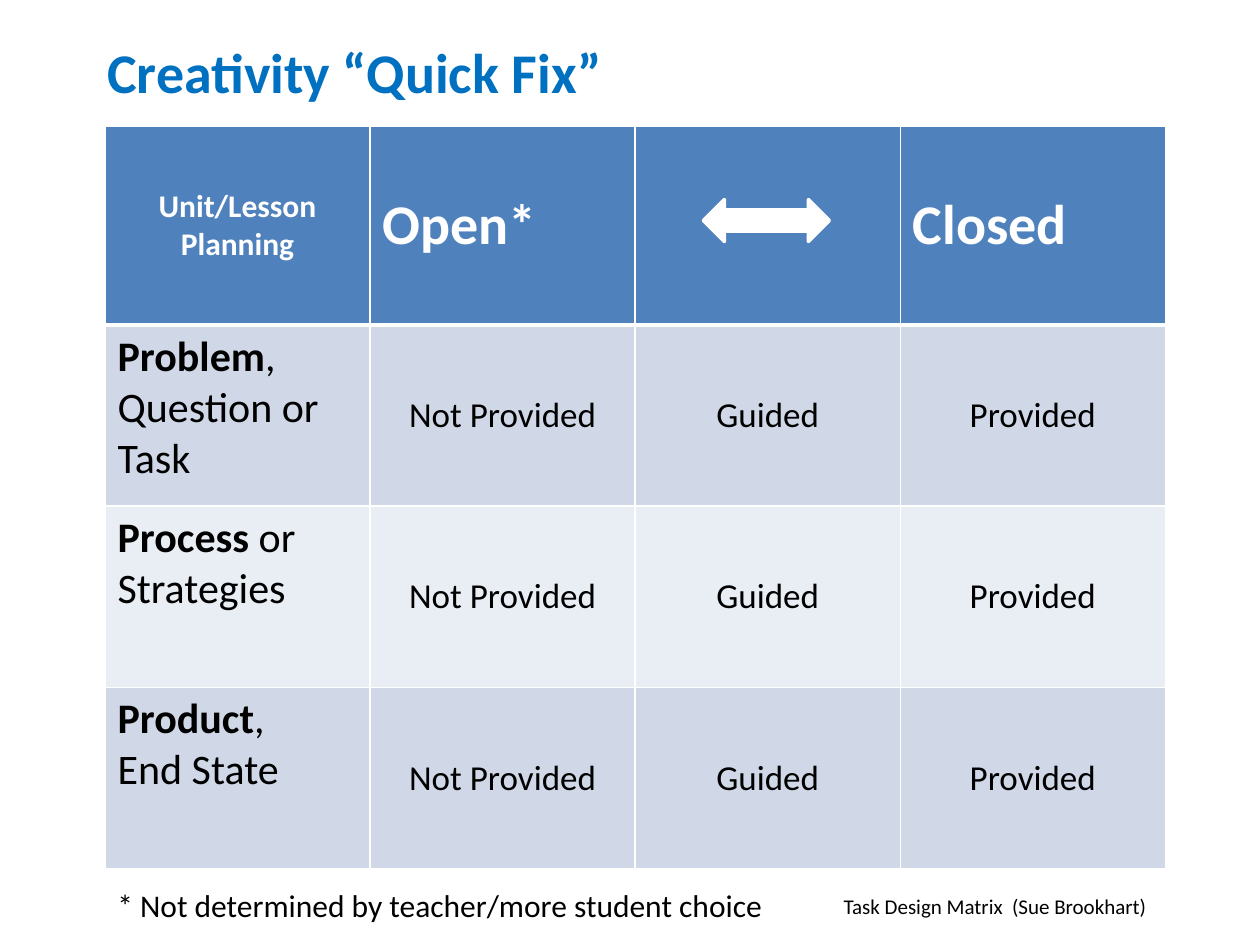
import pptx
import pptx.util
import pptx.dml.color
import pptx.enum.shapes
import pptx.enum.text
import pptx.oxml
import pptx.oxml.ns

Pt = pptx.util.Pt
ALIGN = pptx.enum.text.PP_ALIGN
ANCHOR = pptx.enum.text.MSO_ANCHOR
FONT = "Calibri"
COLORS = {
    "title": "0070C0",
    "header": "4F81BD",
    "odd_row": "D0D8E8",
    "even_row": "E9EDF4",
    "white": "FFFFFF",
    "black": "000000",
}
HEADER = [("Unit/Lesson Planning", 18, ALIGN.CENTER), ("Open*", 32, ALIGN.LEFT),
          ("", 32, ALIGN.LEFT), ("Closed", 32, ALIGN.LEFT)]
# Each row label is a list of paragraphs: (bold part, regular part)
ROW_LABELS = [
    [("Problem", ", Question or Task")],
    [("Process ", "or Strategies")],
    [("Product", ","), ("", "End State")],
]
LEVELS = ["Not Provided", "Guided", "Provided"]


def rgb(name):
    return pptx.dml.color.RGBColor.from_string(COLORS[name])


def style(para, size, color, bold=False, align=ALIGN.LEFT):
    para.alignment = align
    para.font.name = FONT
    para.font.size = Pt(size)
    para.font.bold = bold
    para.font.color.rgb = rgb(color)


def place(shape, box):
    shape.left, shape.top, shape.width, shape.height = [Pt(value) for value in box]


def add_title(page, box, text):
    title = page.shapes.title
    place(title, box)
    frame = title.text_frame
    frame.word_wrap = False
    frame.auto_size = pptx.enum.text.MSO_AUTO_SIZE.NONE
    frame.vertical_anchor = ANCHOR.TOP
    frame.text = text
    style(frame.paragraphs[0], 32, "title", bold=True)


def add_note(page, box, text, size):
    frame = page.shapes.add_textbox(*[Pt(value) for value in box]).text_frame
    frame.word_wrap = False
    frame.text = text
    style(frame.paragraphs[0], size, "black")


def format_cell(cell, fill, bottom=1):
    """Give a cell white borders, with its own bottom width, and a solid fill."""
    properties = cell._tc.get_or_add_tcPr()
    for side, width in (("L", 1), ("R", 1), ("T", 1), ("B", bottom)):
        properties.append(pptx.oxml.parse_xml(
            f'<a:ln{side} {pptx.oxml.ns.nsdecls("a")} w="{Pt(width)}"><a:solidFill>'
            f'<a:srgbClr val="{COLORS["white"]}"/></a:solidFill></a:ln{side}>'))
    cell.fill.solid()
    cell.fill.fore_color.rgb = rgb(fill)


def fill_header(cells):
    for cell, (text, size, align) in zip(cells, HEADER):
        format_cell(cell, "header", bottom=3)
        cell.vertical_anchor = ANCHOR.MIDDLE
        cell.text = text
        style(cell.text_frame.paragraphs[0], size, "white", True, align)


def fill_label(cell, lines):
    frame = cell.text_frame
    for index, (strong, plain) in enumerate(lines):
        para = frame.add_paragraph() if index else frame.paragraphs[0]
        style(para, 24, "black")
        for text, bold in ((strong, True), (plain, False)):
            if text:
                span = para.add_run()
                span.text = text
                span.font.bold = bold


def add_matrix(page, box, header_height):
    left, top, width, height = box
    count = len(ROW_LABELS)
    matrix = page.shapes.add_table(
        count + 1, len(HEADER), Pt(left), Pt(top), Pt(width), Pt(height)).table
    for column in matrix.columns:
        column.width = Pt(width / len(HEADER))
    for index, row in enumerate(matrix.rows):
        row.height = Pt((height - header_height) / count if index else header_height)
    fill_header(matrix.rows[0].cells)
    for index, lines in enumerate(ROW_LABELS):
        label, *options = matrix.rows[index + 1].cells
        fill = "even_row" if index % 2 else "odd_row"
        format_cell(label, fill)
        fill_label(label, lines)
        for cell, level in zip(options, LEVELS):
            format_cell(cell, fill)
            cell.vertical_anchor = ANCHOR.MIDDLE
            cell.text = level
            style(cell.text_frame.paragraphs[0], 20, "black", align=ALIGN.CENTER)


def add_range_arrow(page, box):
    arrow = page.shapes.add_shape(
        pptx.enum.shapes.MSO_SHAPE.LEFT_RIGHT_ARROW, *[Pt(value) for value in box])
    arrow.shadow.inherit = False
    arrow.fill.solid()
    arrow.fill.fore_color.rgb = rgb("white")
    arrow.line.color.rgb = rgb("white")
    arrow.line.width = Pt(2)


def main():
    deck = pptx.Presentation()
    deck.slide_width, deck.slide_height = Pt(720), Pt(540)
    page = deck.slides.add_slide(deck.slide_layouts[5])
    add_title(page, (54, 18, 300, 46), "Creativity “Quick Fix”")
    add_matrix(page, (60, 72, 606, 424.5), header_height=113.7)
    add_range_arrow(page, (402, 114, 72, 24))
    add_note(page, (60, 502.5, 388, 29),
             "* Not determined by teacher/more student choice", 18)
    add_note(page, (475, 507, 189.5, 21.6), "Task Design Matrix  (Sue Brookhart)", 12)
    deck.save("out.pptx")


if __name__ == "__main__":
    main()
